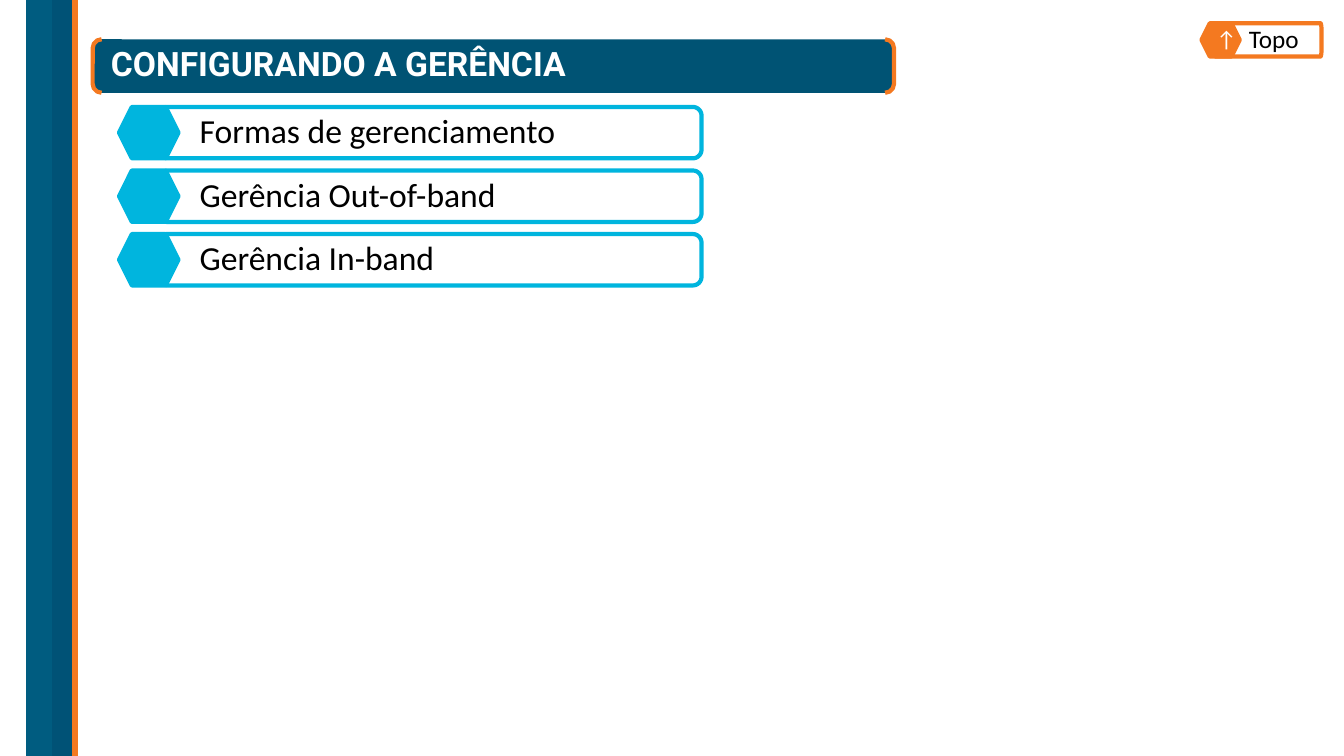
from dataclasses import dataclass
from math import cos, pi, sin

from pptx import Presentation
from pptx.dml.color import RGBColor
from pptx.enum.shapes import MSO_SHAPE
from pptx.enum.text import MSO_ANCHOR, MSO_AUTO_SIZE, PP_ALIGN
from pptx.util import Pt


@dataclass(frozen=True)
class Theme:
    white: RGBColor = RGBColor.from_string("FFFFFF")
    black: RGBColor = RGBColor.from_string("000000")
    banner: RGBColor = RGBColor.from_string("005374")
    band: RGBColor = RGBColor.from_string("005C80")
    band_dark: RGBColor = RGBColor.from_string("005276")
    orange: RGBColor = RGBColor.from_string("F47920")
    cyan: RGBColor = RGBColor.from_string("00B5DE")
    title_font: str = "Roboto"
    body_font: str = "Calibri"
    large: int = 24
    medium: int = 18
    small: int = 16


THEME = Theme()
TOPICS = ["Formas de gerenciamento", "Gerência Out-of-band", "Gerência In-band"]
ARC_STEPS = 8


def paint(shape, fill, line, weight):
    shape.shadow.inherit = False
    shape.fill.solid()
    shape.fill.fore_color.rgb = fill
    shape.line.color.rgb = line
    shape.line.width = Pt(weight)


def add_preset(page, kind, box, fill, line, weight):
    shape = page.shapes.add_shape(kind, *map(Pt, box))
    paint(shape, fill, line, weight)
    return shape


def write(shape, text, font, size, color, insets, align=PP_ALIGN.LEFT, bold=False):
    frame = shape.text_frame
    frame.text = text
    frame.auto_size = MSO_AUTO_SIZE.NONE
    frame.vertical_anchor = MSO_ANCHOR.MIDDLE
    frame.margin_left, frame.margin_top, frame.margin_right, frame.margin_bottom = map(Pt, insets)
    para = frame.paragraphs[0]
    para.alignment = align
    para.line_spacing = 0.9
    para.space_before = Pt(0)
    para.font.name = font
    para.font.size = Pt(size)
    para.font.bold = bold
    para.font.color.rgb = color
    return frame


def add_panel(page, box, corner, color):
    """White panel with square left corners and rounded right corners."""
    left, top, width, height = box
    across, down = corner
    right, bottom = left + width, top + height
    angles = [step * pi / 2 / ARC_STEPS for step in range(ARC_STEPS + 1)]
    upper = [(right - across + across * sin(a), top + down - down * cos(a)) for a in angles]
    lower = [(x, top + bottom - y) for x, y in reversed(upper)]
    points = upper + lower + [(left, bottom)]
    builder = page.shapes.build_freeform(Pt(left), Pt(top))
    builder.add_line_segments([(Pt(x), Pt(y)) for x, y in points], close=True)
    panel = builder.convert_to_shape()
    paint(panel, THEME.white, color, 3)
    return panel


def add_tag(page, text, panel_box, corner, hexagon_box, color, size):
    panel = add_panel(page, panel_box, corner, color)
    frame = write(panel, text, THEME.body_font, size, THEME.black, (23.8, 5, 5, 5))
    frame.word_wrap = True
    return add_preset(page, MSO_SHAPE.HEXAGON, hexagon_box, color, color, 3)


def add_title(page, text):
    add_preset(page, MSO_SHAPE.DOUBLE_BRACKET, (66.2, 28.1, 572.4, 38.2),
               THEME.banner, THEME.orange, 3)
    title = page.shapes.title
    title.left, title.top, title.width, title.height = map(Pt, (72, 28.1, 566.6, 38.2))
    write(title, text, THEME.title_font, THEME.large, THEME.white, (7.2, 3.6, 7.2, 3.6), bold=True)
    # Bring the title in front of its banner
    title.element.getparent().append(title.element)


def main():
    deck = Presentation()
    deck.slide_width, deck.slide_height = Pt(960), Pt(540)
    page = deck.slides.add_slide(deck.slide_layouts[5])

    # Vertical bands on the left edge
    for left, width, color in [(19.4, 32.4, THEME.band), (37.4, 14.4, THEME.band_dark),
                               (51.8, 3.6, THEME.orange)]:
        add_preset(page, MSO_SHAPE.RECTANGLE, (left, 0, width, 540), color, color, 1)

    add_title(page, "CONFIGURANDO A GERÊNCIA")

    # Topic list
    for row, topic in enumerate(TOPICS):
        top = 76.4 + row * 45.4
        add_tag(page, topic, (118.8, top, 382.3, 36.7), (6.2, 6.2),
                (85, top, 42.5, 36.7), THEME.cyan, THEME.large)

    # Return-to-top button
    hexagon = add_tag(page, "Topo", (868.3, 16.6, 75.6, 23.8), (0.8, 3.8),
                      (858.2, 16.6, 27.4, 23.8), THEME.orange, THEME.medium)
    frame = write(hexagon, "↑", THEME.body_font, THEME.small, THEME.white,
                  (8.6, 0, 0, 0), PP_ALIGN.CENTER)
    frame.word_wrap = False

    deck.save("out.pptx")


if __name__ == "__main__":
    main()
